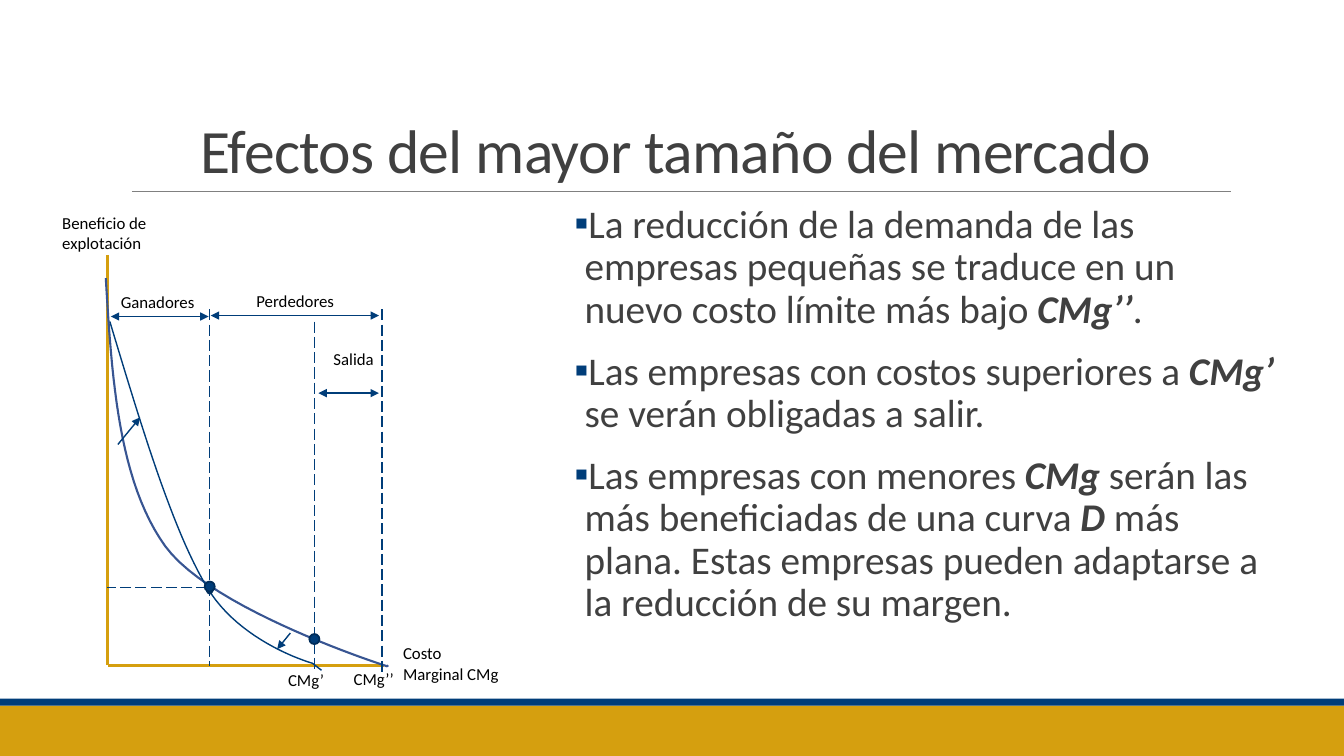
import pptx
import pptx.dml.color
import pptx.enum.dml
import pptx.enum.shapes
import pptx.enum.text
import pptx.oxml.ns
import pptx.util
from lxml import etree

Pt = pptx.util.Pt
ANCHOR = pptx.enum.text.MSO_ANCHOR
ALIGN = pptx.enum.text.PP_ALIGN
SHAPE = pptx.enum.shapes.MSO_SHAPE
FONT = "Calibri"
COLORS = {"gold": "D59F0F", "navy": "003D79", "rim": "002D5A", "curve": "385592",
          "rule": "808080", "text": "404040", "label": "000000"}

# Diagram positions shared by several elements, in points
AXIS_X, AXIS_Y = 77, 475.2
TIE_X, EXIT_X, LIMIT_X = 149.8, 224.6, 272.9
TIE_Y, TOP_Y = 419.8, 221


def color(name):
    return pptx.dml.color.RGBColor.from_string(COLORS[name])


def add_element(parent, tag, **attributes):
    return etree.SubElement(parent, pptx.oxml.ns.qn(tag), attributes)


def add_bar(page, left, top, width, height, fill):
    bar = page.shapes.add_shape(SHAPE.RECTANGLE, Pt(left), Pt(top), Pt(width), Pt(height))
    bar.shadow.inherit = False
    bar.fill.solid()
    bar.fill.fore_color.rgb = color(fill)
    bar.line.fill.background()


def add_dot(page, center_x, center_y, width, height):
    dot = page.shapes.add_shape(SHAPE.OVAL, Pt(center_x - width / 2),
                                Pt(center_y - height / 2), Pt(width), Pt(height))
    dot.shadow.inherit = False
    dot.fill.solid()
    dot.fill.fore_color.rgb = color("navy")
    dot.line.color.rgb = color("rim")
    dot.line.width = Pt(1.25)


def add_line(page, start, end, stroke="navy", weight=1, dashed=False, arrows=()):
    line = page.shapes.add_connector(pptx.enum.shapes.MSO_CONNECTOR.STRAIGHT,
                                     *(Pt(value) for value in (*start, *end)))
    line.line.color.rgb = color(stroke)
    line.line.width = Pt(weight)
    if dashed:
        line.line.dash_style = pptx.enum.dml.MSO_LINE.LONG_DASH
    for arrow in arrows:
        add_element(line.line._get_or_add_ln(), "a:" + arrow, type="triangle")
    add_element(line._element.spPr, "a:effectLst")


def bezier_points(start, handle_1, handle_2, end, steps=24):
    for step in range(1, steps + 1):
        t = step / steps
        weights = ((1 - t) ** 3, 3 * t * (1 - t) ** 2, 3 * t * t * (1 - t), t ** 3)
        yield tuple(sum(weight * point[axis] for weight, point in
                        zip(weights, (start, handle_1, handle_2, end))) for axis in (0, 1))


def add_curve(page, start, segments, tail, stroke, weight):
    points = [start]
    for segment in segments:
        points.extend(bezier_points(points[-1], *segment))
    points.append(tail)
    outline = [(Pt(x), Pt(y)) for x, y in points]
    builder = page.shapes.build_freeform(*outline[0], scale=1.0)
    builder.add_line_segments(outline[1:], close=False)
    curve = builder.convert_to_shape()
    curve.shadow.inherit = False
    curve.fill.background()
    curve.line.color.rgb = color(stroke)
    curve.line.width = Pt(weight)


def add_box(page, left, top, width, height, wrap=True):
    box = page.shapes.add_textbox(Pt(left), Pt(top), Pt(width), Pt(height))
    box.text_frame.word_wrap = wrap
    return box.text_frame


def add_span(para, text, size, fill, strong=False):
    span = para.add_run()
    span.text = text
    span.font.name = FONT
    span.font.size = Pt(size)
    span.font.color.rgb = color(fill)
    if strong:
        span.font.bold = span.font.italic = True
    return span


def add_label(page, lines, left, top, width, height=21.6, wrap=True, align=ALIGN.LEFT):
    frame = add_box(page, left, top, width, height, wrap)
    frame.auto_size = pptx.enum.text.MSO_AUTO_SIZE.SHAPE_TO_FIT_TEXT
    for index, line in enumerate(lines):
        para = frame.add_paragraph() if index else frame.paragraphs[0]
        para.alignment = align
        add_span(para, line, 12, "label")


def add_title(page, text):
    frame = add_box(page, 86.4, 22.3, 792, 114.5)
    frame.vertical_anchor = ANCHOR.BOTTOM
    para = frame.paragraphs[0]
    para.alignment = ALIGN.CENTER
    para.line_spacing = 0.85
    span = add_span(para, text, 44, "text")
    span._r.get_or_add_rPr().set("spc", "-50")


def add_bullets(page, bullets):
    frame = add_box(page, 410.4, 142.6, 504.7, 403.2)
    frame.margin_left = frame.margin_right = 0
    for index, pieces in enumerate(bullets):
        para = frame.add_paragraph() if index else frame.paragraphs[0]
        para.line_spacing = 0.9
        para.space_before, para.space_after = Pt(12), Pt(2)
        properties = para._p.get_or_add_pPr()
        properties.set("marL", str(Pt(7.2)))
        properties.set("indent", str(-Pt(7.2)))
        bullet_color = add_element(properties, "a:buClr")
        add_element(bullet_color, "a:srgbClr", val=COLORS["navy"])
        add_element(properties, "a:buFont", typeface=FONT)
        add_element(properties, "a:buChar", char="▪")
        # Plain and emphasised pieces alternate
        for position, piece in enumerate(pieces):
            add_span(para, piece, 28, "text", strong=position % 2 == 1)


def add_diagram(page):
    # Axes
    add_line(page, (AXIS_X, 182), (AXIS_X, AXIS_Y), "gold", 2.25)
    add_line(page, (AXIS_X, AXIS_Y), (274.3, AXIS_Y), "gold", 2.25)

    # Profit curves before and after
    add_curve(page, (75.6, 198.7),
              [((79.9, 271.4), (85, 344.2), (118.1, 390.2)),
               ((151.9, 436.3), (276.5, 475.9), (276.5, 475.9))],
              (277.2, 475.2), "curve", 1.5)
    add_curve(page, (78.5, 229.7),
              [((100.8, 303.8), (123.1, 378), (147.6, 419)),
               ((171.4, 459.4), (223.2, 473.8), (223.2, 473.8))],
              (229.7, 478.8), "navy", 1)

    # Dashed guides
    for start, end in (((TIE_X, TOP_Y), (TIE_X, 475.9)),
                       ((148.3, TIE_Y), (76.3, TIE_Y)),
                       ((EXIT_X, 229.7), (EXIT_X, 478.8)),
                       ((LIMIT_X, TOP_Y), (LIMIT_X, 480.2))):
        add_line(page, start, end, dashed=True)

    # Range arrows and shift arrows
    for left, right, y in ((79.2, 149, 226.1), (150.5, 270.7, 225.4), (227.5, 270.7, 280.8)):
        add_line(page, (left, y), (right, y), arrows=("headEnd", "tailEnd"))
    for start, end in (((84.2, 317.5), (100.1, 298.1)), ((207.4, 452.2), (198, 463.7))):
        add_line(page, start, end, arrows=("tailEnd",))

    # Crossing points
    add_dot(page, TIE_X, 420.8, 4.3, 6.5)
    add_dot(page, TIE_X, 419, 7.2, 7.2)
    add_dot(page, EXIT_X, 456.5, 7.2, 7.2)

    # Labels
    add_label(page, ["Beneficio de explotación"], 37.4, 148.3, 124.6, 36)
    add_label(page, ["Costo", "Marginal CMg"], 280.8, 455.8, 90, 36)
    add_label(page, ["CMg’"], 198.7, 475.2, 55.4)
    add_label(page, ["CMg’’"], 245.5, 474.5, 49)
    add_label(page, ["Ganadores"], 79.2, 205.2, 67.7, wrap=False)
    add_label(page, ["Perdedores"], 151.9, 204.5, 118.1, align=ALIGN.CENTER)
    add_label(page, ["Salida"], 231.1, 245.5, 43.9, wrap=False)


def main():
    deck = pptx.Presentation()
    deck.slide_width, deck.slide_height = Pt(960), Pt(540)
    page = deck.slides.add_slide(deck.slide_layouts[6])

    # Footer bands and title rule
    add_bar(page, 0, 504, 960, 36, "gold")
    add_bar(page, 0, 499, 960, 5, "navy")
    add_line(page, (94.3, 136.8), (879.1, 136.8), "rule", 0.5)

    # Text
    add_bullets(page, [
        ("La reducción de la demanda de las empresas pequeñas se traduce en un "
         "nuevo costo límite más bajo ", "CMg’’", "."),
        ("Las empresas con costos superiores a ", "CMg’ ", "se verán obligadas a salir."),
        ("Las empresas con menores ", "CMg", " serán las más beneficiadas de una curva ", "D",
         " más plana. Estas empresas pueden adaptarse a la reducción de su margen."),
    ])
    add_title(page, "Efectos del mayor tamaño del mercado")

    add_diagram(page)
    deck.save("out.pptx")


if __name__ == "__main__":
    main()
